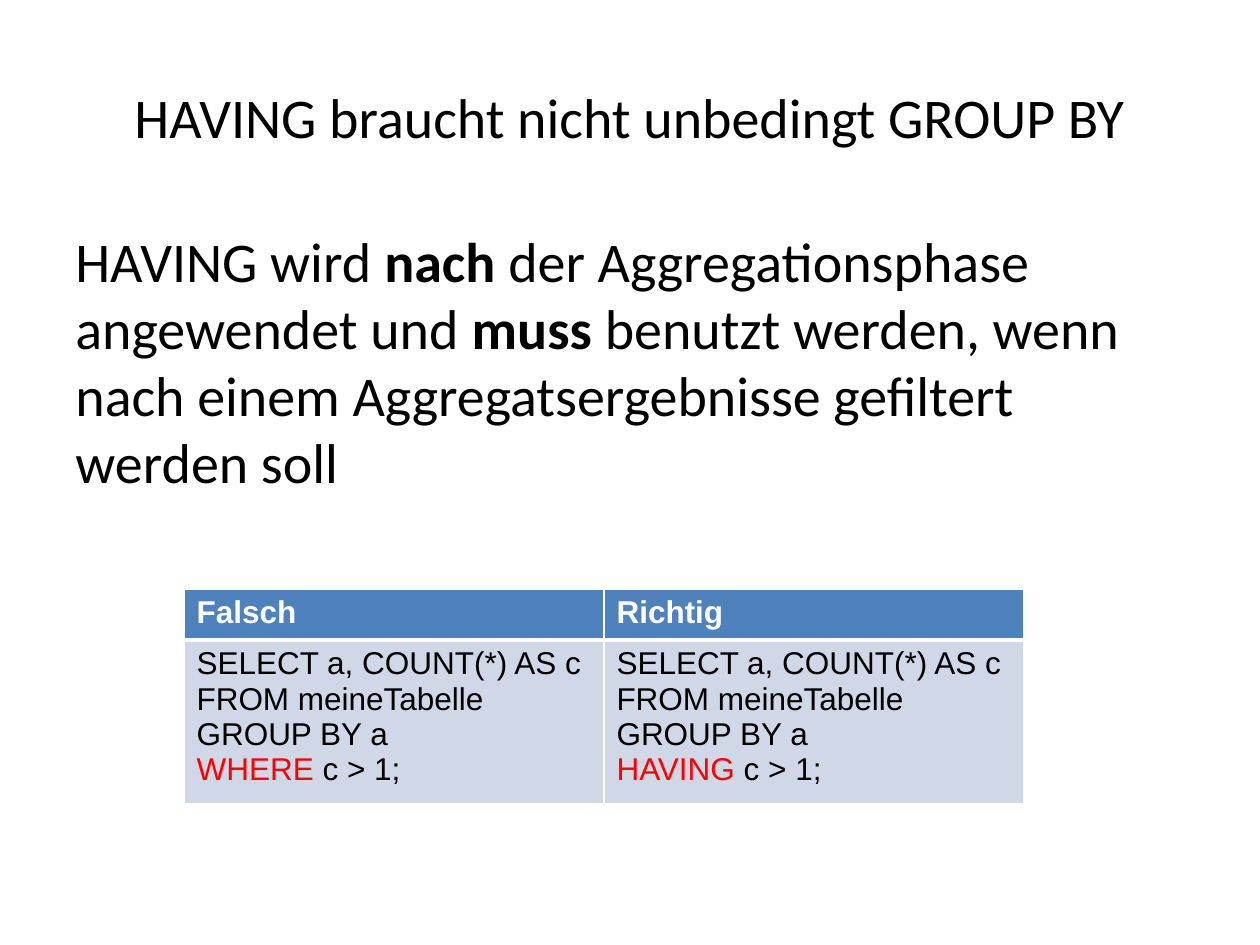
from lxml import etree
from pptx import Presentation
from pptx.dml.color import RGBColor
from pptx.enum.text import MSO_ANCHOR, PP_ALIGN
from pptx.oxml.ns import qn
from pptx.util import Pt

SCALE = 914400 / 126  # EMU per px
CENTER, LEFT = PP_ALIGN.CENTER, PP_ALIGN.LEFT
MIDDLE, TOP = MSO_ANCHOR.MIDDLE, MSO_ANCHOR.TOP

BLACK = RGBColor(0x00, 0x00, 0x00)
WHITE = RGBColor(0xFF, 0xFF, 0xFF)
RED = RGBColor(0xFF, 0x00, 0x00)
BLUE = RGBColor(0x4F, 0x81, 0xBD)
PALE = RGBColor(0xD0, 0xD8, 0xE8)

PLAIN = {"name": "Calibri", "size": Pt(32), "bold": False, "color": BLACK}
STRONG = {**PLAIN, "bold": True}
CODE = {"name": "Arial", "size": Pt(18), "bold": False, "color": BLACK}
MARK = {**CODE, "color": RED}
HEAD = {**CODE, "bold": True, "color": WHITE}

# Column title and the keyword that differs in its query
QUERIES = [("Falsch", "WHERE"), ("Richtig", "HAVING")]


def px(num):
    return round(num * SCALE)


def write(frame, lines, align=LEFT):
    """Fill a frame; each line is a list of (text, format) runs."""
    for i, line in enumerate(lines):
        para = frame.paragraphs[0] if i == 0 else frame.add_paragraph()
        para.alignment = align
        for text, form in line:
            run = para.add_run()
            run.text = text
            for key, value in form.items():
                if key == "color":
                    run.font.color.rgb = value
                else:
                    setattr(run.font, key, value)


def add_text(slide, box, lines, align=LEFT, anchor=TOP):
    frame = slide.shapes.add_textbox(*map(px, box)).text_frame
    frame.word_wrap = True
    frame.vertical_anchor = anchor
    write(frame, lines, align)


def set_edges(cell, widths):
    """Draw white cell borders; widths in points by side."""
    props = cell._tc.get_or_add_tcPr()
    for i, (side, width) in enumerate(widths.items()):
        line = etree.Element(qn(f"a:ln{side}"), w=str(Pt(width)))
        fill = etree.SubElement(line, qn("a:solidFill"))
        etree.SubElement(fill, qn("a:srgbClr"), val=str(WHITE))
        props.insert(i, line)


def fill_cell(cell, lines, color, top, bottom):
    write(cell.text_frame, lines)
    cell.fill.solid()
    cell.fill.fore_color.rgb = color
    set_edges(cell, {"L": 1, "R": 1, "T": top, "B": bottom})


def add_queries(slide, box):
    table = slide.shapes.add_table(2, len(QUERIES), *map(px, box)).table
    for row, height in zip(table.rows, (51, box[3] - 51)):
        row.height = px(height)
    for col, (title, word) in enumerate(QUERIES):
        code = [
            [("SELECT a, COUNT(*) AS c", CODE)],
            [("FROM meineTabelle", CODE)],
            [("GROUP BY a", CODE)],
            [(word, MARK), (" c > 1;", CODE)],
        ]
        fill_cell(table.cell(0, col), [[(title, HEAD)]], BLUE, 1, 3)
        fill_cell(table.cell(1, col), code, PALE, 3, 1)


def main():
    deck = Presentation()
    deck.slide_width, deck.slide_height = px(1260), px(945)
    slide = deck.slides.add_slide(deck.slide_layouts[6])

    # Title
    title = [[("HAVING braucht nicht unbedingt GROUP BY", PLAIN)]]
    add_text(slide, (63, 38, 1134, 157), title, CENTER, MIDDLE)

    # Explanation
    body = [[
        ("HAVING wird ", PLAIN),
        ("nach", STRONG),
        (" der Aggregationsphase angewendet und ", PLAIN),
        ("muss", STRONG),
        (" benutzt werden, wenn nach einem Aggregatsergebnisse "
         "gefiltert werden soll", PLAIN),
    ]]
    add_text(slide, (63, 220, 1134, 624), body)

    # Comparison of both queries
    add_queries(slide, (184, 589, 840, 204))

    deck.save("out.pptx")


if __name__ == "__main__":
    main()
